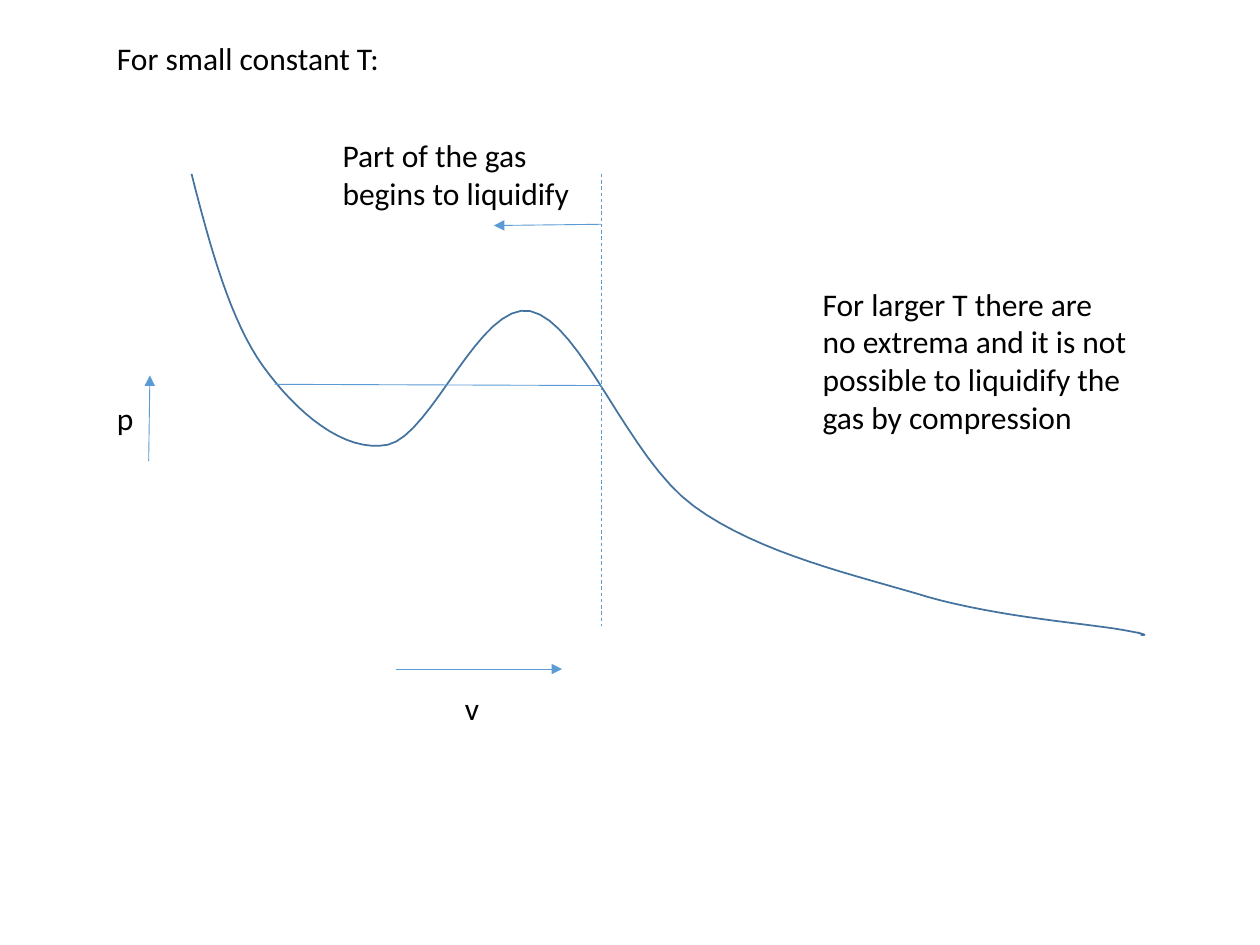
from dataclasses import dataclass
from typing import NamedTuple

from pptx import Presentation
from pptx.dml.color import RGBColor
from pptx.enum import dml, shapes, text
from pptx.oxml.ns import qn
from pptx.util import Inches, Pt
from lxml import etree


@dataclass(frozen=True)
class Theme:
    font: str = "Calibri"
    size: float = 18
    ink: str = "000000"
    curve: str = "43739E"
    line: str = "5B9BD5"
    thick: float = 1
    thin: float = 0.5


class Label(NamedTuple):
    words: str
    left: float
    top: float
    width: float
    height: float = 0.4
    wrap: bool = False


class Line(NamedTuple):
    start: tuple[float, float]
    end: tuple[float, float]
    arrow: bool = False
    dash: bool = False


THEME = Theme()
STEPS = 16  # points per curve segment

# Isotherm: start point, then two control points and an end point per segment
START = (1.52, 1.38)
CURVE = [
    ((1.67, 1.97), (1.83, 2.55), (2.09, 2.91)),
    ((2.35, 3.27), (2.73, 3.6), (3.08, 3.53)),
    ((3.43, 3.45), (3.81, 2.39), (4.21, 2.47)),
    ((4.62, 2.56), (4.98, 3.64), (5.51, 4.02)),
    ((6.03, 4.4), (6.81, 4.57), (7.37, 4.74)),
    ((7.94, 4.9), (8.63, 4.95), (8.91, 5)),
    ((9.19, 5.05), (9.04, 5.04), (9.06, 5.04)),
    ((9.08, 5.04), (9.06, 5.03), (9.03, 5.02)),
]

EDGE = 4.77  # volume at which the gas begins to liquidify
LINES = [
    Line((2.18, 3.05), (EDGE, 3.06)),
    Line((EDGE, 1.38), (EDGE, 4.97), dash=True),
    Line((EDGE, 1.78), (3.92, 1.79), arrow=True),
    Line((1.18, 3.66), (1.19, 2.98), arrow=True),
    Line((3.14, 5.31), (4.46, 5.31), arrow=True),
]

LABELS = [
    Label("Part of the gas begins to liquidify", 2.62, 1.03, 2.15, 0.71, True),
    Label("For small constant T:", 0.83, 0.26, 2.3),
    Label("p", 0.83, 3.12, 0.34),
    Label("v", 3.59, 5.42, 0.32),
    Label("For larger T there are no extrema and it is not possible to "
          "liquidify the gas by compression", 6.43, 2.21, 2.65, 1.31, True),
]


def trace() -> list[tuple[int, int]]:
    """Sample the cubic segments of the isotherm."""
    points, a = [], START
    for b, c, d in CURVE:
        for step in range(1, STEPS + 1):
            t = step / STEPS
            s = 1 - t
            x, y = (s**3 * a[i] + 3 * s * s * t * b[i] + 3 * s * t * t * c[i]
                    + t**3 * d[i] for i in (0, 1))
            points.append((Inches(x), Inches(y)))
        a = d
    return points


def draw_curve(slide) -> None:
    pen = slide.shapes.build_freeform(Inches(START[0]), Inches(START[1]))
    pen.add_line_segments(trace(), close=False)
    shape = pen.convert_to_shape()
    shape.shadow.inherit = False
    shape.fill.background()
    shape.line.color.rgb = RGBColor.from_string(THEME.curve)
    shape.line.width = Pt(THEME.thick)


def draw_line(slide, item: Line) -> None:
    ends = [Inches(n) for n in (*item.start, *item.end)]
    wire = slide.shapes.add_connector(shapes.MSO_CONNECTOR.STRAIGHT, *ends)
    wire.line.color.rgb = RGBColor.from_string(THEME.line)
    wire.line.width = Pt(THEME.thin)
    if item.dash:
        wire.line.dash_style = dml.MSO_LINE.DASH
    props = wire.line._get_or_add_ln()
    if item.arrow:
        etree.SubElement(props, qn("a:tailEnd"), type="triangle")
    etree.SubElement(props.getparent(), qn("a:effectLst"))


def draw_label(slide, item: Label) -> None:
    box = slide.shapes.add_textbox(Inches(item.left), Inches(item.top),
                                   Inches(item.width), Inches(item.height))
    frame = box.text_frame
    frame.word_wrap = item.wrap
    frame.auto_size = text.MSO_AUTO_SIZE.SHAPE_TO_FIT_TEXT
    run = frame.paragraphs[0].add_run()
    run.text = item.words
    run.font.name = THEME.font
    run.font.size = Pt(THEME.size)
    run.font.color.rgb = RGBColor.from_string(THEME.ink)


def main() -> None:
    deck = Presentation()
    deck.slide_width, deck.slide_height = Inches(10), Inches(7.5)
    slide = deck.slides.add_slide(deck.slide_layouts[6])

    # Isotherm, then guides and axis arrows, then wording
    draw_curve(slide)
    for line in LINES:
        draw_line(slide, line)
    for label in LABELS:
        draw_label(slide, label)

    deck.save("out.pptx")


if __name__ == "__main__":
    main()
